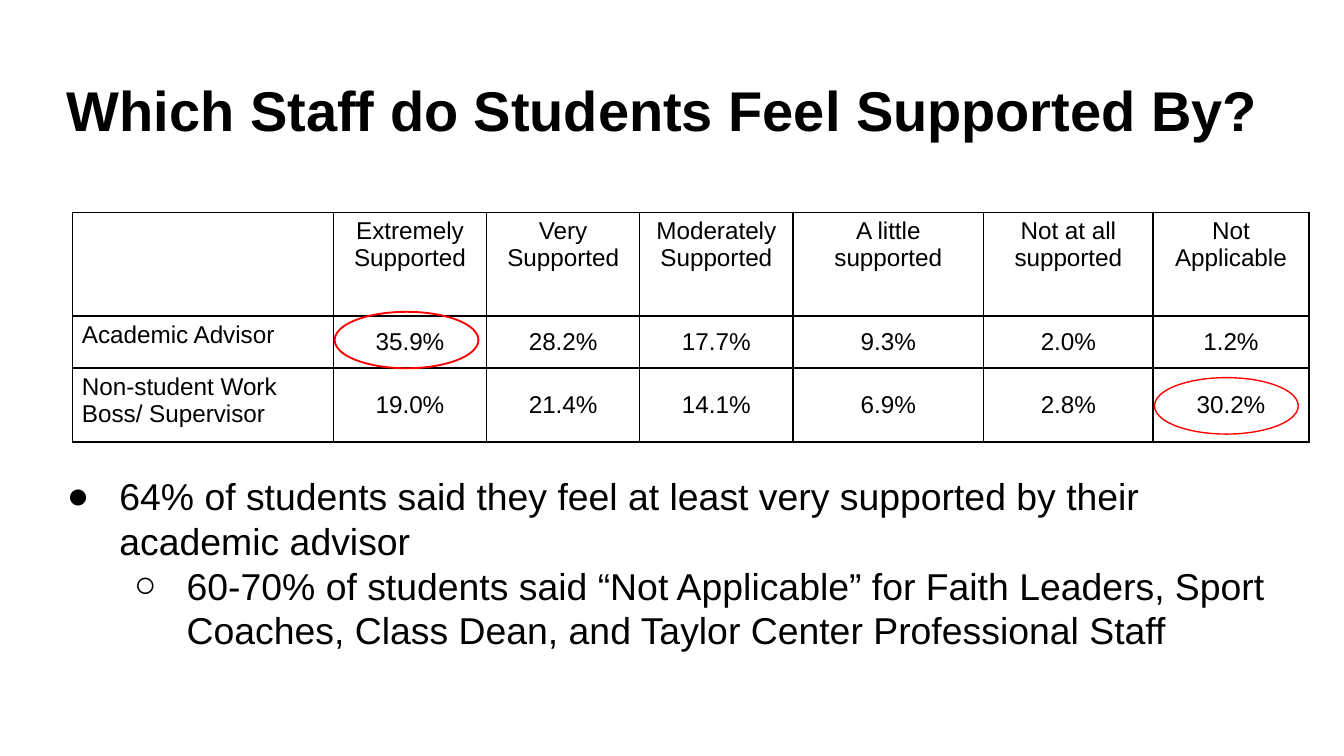
from dataclasses import dataclass
from lxml.etree import SubElement
from pptx import Presentation
from pptx.dml.color import RGBColor
from pptx.enum.shapes import MSO_SHAPE as Shape
from pptx.enum.text import MSO_ANCHOR as Anchor, PP_ALIGN as Align
from pptx.oxml.ns import qn
from pptx.slide import Slide
from pptx.util import Inches, Pt


def color(value):
    return RGBColor.from_string(value)


@dataclass
class SlideBuilder:
    slide: Slide
    font: str = "Arial"
    ink: str = "000000"
    accent: str = "FF0000"

    def style(self, paragraph, size, bold=False):
        paragraph.font.name = self.font
        paragraph.font.size = Pt(size)
        paragraph.font.bold = bold
        paragraph.font.color.rgb = color(self.ink)

    def text_frame(self, left, top, width, height, vertical_inset):
        box = self.slide.shapes.add_textbox(
            Inches(left), Inches(top), Inches(width), Inches(height))
        frame = box.text_frame
        frame.word_wrap = True
        frame.margin_left = frame.margin_right = Inches(0.1)
        frame.margin_top = frame.margin_bottom = Inches(vertical_inset)
        return frame

    def title(self, text, left, top, width, height):
        frame = self.text_frame(left, top, width, height, 0.05)
        frame.vertical_anchor = Anchor.MIDDLE
        paragraph = frame.paragraphs[0]
        paragraph.text = text
        paragraph.line_spacing = 0.9
        self.style(paragraph, 30, bold=True)

    def bullets(self, items, left, top, width, height):
        frame = self.text_frame(left, top, width, height, 0.1)
        for index, (level, text) in enumerate(items):
            paragraph = frame.add_paragraph() if index else frame.paragraphs[0]
            paragraph.text = text
            paragraph.level = level
            self.style(paragraph, 20)
            properties = paragraph._p.get_or_add_pPr()
            properties.set("marL", str(Inches(0.5 * (level + 1))))
            properties.set("indent", str(Inches(-0.39)))
            bullet_color = SubElement(properties, qn("a:buClr"))
            SubElement(bullet_color, qn("a:srgbClr"), val=self.ink)
            SubElement(properties, qn("a:buFont"), typeface=self.font)
            SubElement(properties, qn("a:buChar"), char="●○"[level])
            properties.append(properties.find(qn("a:defRPr")))

    def borders(self, cell):
        properties = cell._tc.get_or_add_tcPr()
        for side in ("lnL", "lnR", "lnT", "lnB"):
            line = SubElement(properties, qn(f"a:{side}"), w=str(Pt(1)))
            fill = SubElement(line, qn("a:solidFill"))
            SubElement(fill, qn("a:srgbClr"), val=self.ink)

    def table(self, rows, widths, heights, left, top):
        table = self.slide.shapes.add_table(
            len(rows), len(widths), Inches(left), Inches(top),
            Inches(sum(widths)), Inches(sum(heights))).table
        table.first_row = table.horz_banding = False
        for column, width in zip(table.columns, widths):
            column.width = Inches(width)
        for row, height in zip(table.rows, heights):
            row.height = Inches(height)
        for row_index, values in enumerate(rows):
            for column_index, value in enumerate(values):
                cell = table.cell(row_index, column_index)
                cell.margin_left = cell.margin_right = Inches(0.07)
                cell.margin_top = cell.margin_bottom = Inches(0.04)
                is_value = row_index > 0 and column_index > 0
                cell.vertical_anchor = Anchor.MIDDLE if is_value else Anchor.TOP
                self.borders(cell)
                cell.fill.background()
                paragraph = cell.text_frame.paragraphs[0]
                paragraph.text = value
                paragraph.alignment = Align.CENTER if column_index else Align.LEFT
                self.style(paragraph, 13)

    def highlight(self, left, top, line_width):
        shape = self.slide.shapes.add_shape(
            Shape.OVAL, Inches(left), Inches(top), Inches(1.07), Inches(0.42))
        shape.shadow.inherit = False
        shape.fill.background()
        shape.line.color.rgb = color(self.accent)
        shape.line.width = Pt(line_width)


def main():
    presentation = Presentation()
    presentation.slide_width = Inches(10)
    presentation.slide_height = Inches(10 * 9 / 16)
    builder = SlideBuilder(
        presentation.slides.add_slide(presentation.slide_layouts[6]))

    builder.title("Which Staff do Students Feel Supported By?", 0.4, 0.3, 9.44, 1.09)
    builder.table(
        [
            ["", "Extremely Supported", "Very Supported", "Moderately Supported",
             "A little supported", "Not at all supported", "Not Applicable"],
            ["Academic Advisor", "35.9%", "28.2%", "17.7%", "9.3%", "2.0%", "1.2%"],
            ["Non-student Work Boss/ Supervisor",
             "19.0%", "21.4%", "14.1%", "6.9%", "2.8%", "30.2%"],
        ],
        widths=[1.94, 1.14, 1.14, 1.14, 1.42, 1.26, 1.16],
        heights=[0.77, 0.39, 0.55], left=0.54, top=1.58)
    builder.highlight(2.49, 2.32, 1)
    builder.bullets(
        [
            (0, "64% of students said they feel at least very supported by their "
                "academic advisor"),
            (1, "60-70% of students said “Not Applicable” for Faith Leaders, Sport "
                "Coaches, Class Dean, and Taylor Center Professional Staff"),
        ],
        0.29, 3.42, 9.31, 1.91)
    builder.highlight(8.59, 2.81, 0.75)
    presentation.save("out.pptx")


if __name__ == "__main__":
    main()
